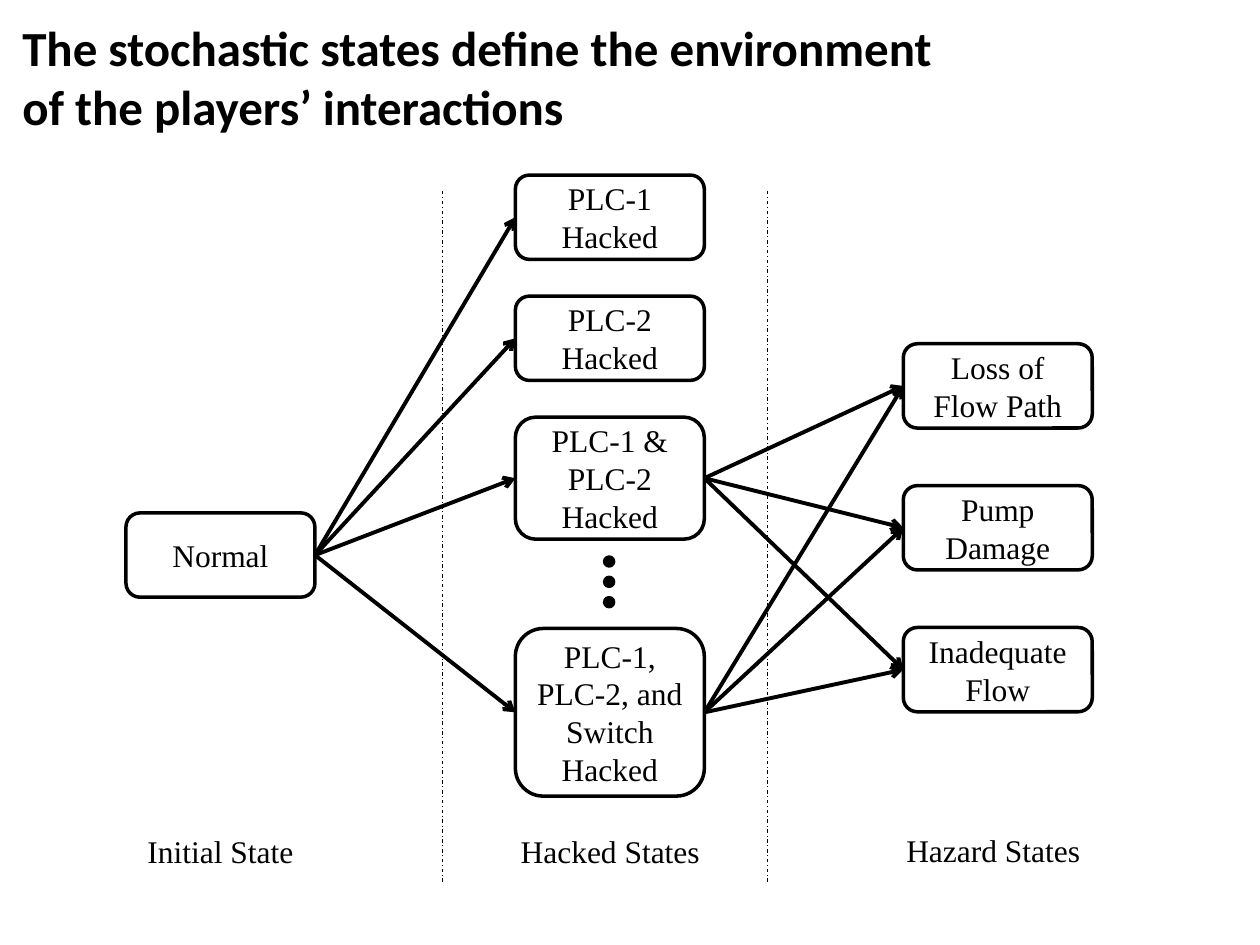
from dataclasses import dataclass

import pptx
import pptx.dml.color
import pptx.enum.dml
import pptx.enum.shapes
import pptx.enum.text
import pptx.oxml
import pptx.util
from pptx.util import Cm, Pt

SHAPE = pptx.enum.shapes.MSO_SHAPE
ALIGN = pptx.enum.text.PP_ALIGN
RGB = pptx.dml.color.RGBColor
TOP, LEFT, BOTTOM, RIGHT = range(4)


@dataclass(frozen=True)
class Theme:
    ink: RGB = RGB(0, 0, 0)
    paper: RGB = RGB(255, 255, 255)
    title_font: str = "Calibri"
    body_font: str = "Times New Roman"
    title_size: float = 28
    body_size: float = 18
    box_line: float = 2
    arrow_line: float = 2.25
    divider_line: float = 0.5


@dataclass(frozen=True)
class Box:
    """A rounded box, measured in centimetres."""
    text: str
    left: float
    top: float
    width: float = 3.81
    height: float = 1.70
    outlined: bool = True


THEME = Theme()

# State columns
HACKED_X, HAZARD_X = 10.39, 18.21
NORMAL = Box("Normal", 2.54, 10.34)
PLC_1, PLC_2, BOTH_PLCS = [
    Box(text, HACKED_X, 3.53 + 2.44 * i, height=height)
    for i, (text, height) in enumerate([
        ("PLC-1 Hacked", 1.70), ("PLC-2 Hacked", 1.70), ("PLC-1 & PLC-2 Hacked", 2.46)])
]
ALL_HACKED = Box("PLC-1, PLC-2, and Switch Hacked", HACKED_X, 12.67, height=3.38)
HACKED = [PLC_1, PLC_2, BOTH_PLCS, ALL_HACKED]
HAZARDS = [Box(text, HAZARD_X, 6.93 + 2.86 * i)
           for i, text in enumerate(["Loss of Flow Path", "Pump Damage", "Inadequate Flow"])]
LABELS = [
    Box("Initial State", 2.54, 16.31, outlined=False),
    Box("Hacked States", 9.55, 16.31, width=5.51, outlined=False),
    Box("Hazard States", 17.70, 16.28, width=4.65, outlined=False),
]
TRANSITIONS = ([(NORMAL, state) for state in HACKED]
               + [(state, hazard) for state in (BOTH_PLCS, ALL_HACKED) for hazard in HAZARDS])


def style_runs(tf, font: str, size: float, bold: bool = False) -> None:
    for p in tf.paragraphs:
        for r in p.runs:
            r.font.name = font
            r.font.size = Pt(size)
            r.font.bold = bold
            r.font.color.rgb = THEME.ink


def add_title(s, text: str) -> None:
    tf = s.shapes.add_textbox(Cm(0.2), Cm(0.23), Cm(24.77), Cm(2.64)).text_frame
    tf.word_wrap = True
    tf.text = text
    style_runs(tf, THEME.title_font, THEME.title_size, bold=True)


def add_solid(s, kind, left: float, top: float, width: float, height: float, fill: RGB):
    sp = s.shapes.add_shape(kind, Cm(left), Cm(top), Cm(width), Cm(height))
    sp.shadow.inherit = False
    sp.fill.solid()
    sp.fill.fore_color.rgb = fill
    sp.line.color.rgb = THEME.ink
    sp.line.width = Pt(THEME.box_line)
    return sp


def add_box(s, box: Box):
    sp = add_solid(s, SHAPE.ROUNDED_RECTANGLE, box.left, box.top, box.width, box.height,
                   THEME.paper)
    if not box.outlined:
        sp.fill.background()
        sp.line.fill.background()
    tf = sp.text_frame
    tf.word_wrap = True
    tf.vertical_anchor = pptx.enum.text.MSO_ANCHOR.MIDDLE
    tf.text = box.text
    tf.paragraphs[0].alignment = ALIGN.CENTER
    style_runs(tf, THEME.body_font, THEME.body_size)
    return sp


def add_line(s, x1: float, y1: float, x2: float, y2: float, width: float):
    line = s.shapes.add_connector(pptx.enum.shapes.MSO_CONNECTOR.STRAIGHT,
                                  Cm(x1), Cm(y1), Cm(x2), Cm(y2))
    line.line.color.rgb = THEME.ink
    line.line.width = Pt(width)
    line._element.spPr.append(pptx.oxml.parse_xml(
        '<a:effectLst xmlns:a="http://schemas.openxmlformats.org/drawingml/2006/main"/>'))
    return line


def add_arrow(s, source, target) -> None:
    arrow = add_line(s, 0, 0, 0, 0, THEME.arrow_line)
    arrow.begin_connect(source, RIGHT)
    arrow.end_connect(target, LEFT)
    arrow.line._get_or_add_ln().append(pptx.oxml.parse_xml(
        '<a:tailEnd xmlns:a="http://schemas.openxmlformats.org/drawingml/2006/main"'
        ' type="arrow"/>'))


def main() -> None:
    prs = pptx.Presentation()
    prs.slide_width, prs.slide_height = Cm(25.4), Cm(19.05)
    s = prs.slides.add_slide(prs.slide_layouts[6])

    add_title(s, "The stochastic states define the environment \vof the players’ interactions")

    # States and column labels
    shapes = {box: add_box(s, box) for box in [NORMAL, *HACKED, *LABELS, *HAZARDS]}

    # Transitions between states
    for source, target in TRANSITIONS:
        add_arrow(s, shapes[source], shapes[target])

    # Dots for the omitted hacked states
    for i in range(3):
        add_solid(s, SHAPE.OVAL, 12.19, 11.23 + 0.41 * i, 0.18, 0.18, THEME.ink)

    # Column dividers
    for x in (8.92, 15.47):
        divider = add_line(s, x, 17.78, x, 3.81, THEME.divider_line)
        divider.line.dash_style = pptx.enum.dml.MSO_LINE.DASH_DOT

    prs.save("out.pptx")


if __name__ == "__main__":
    main()
